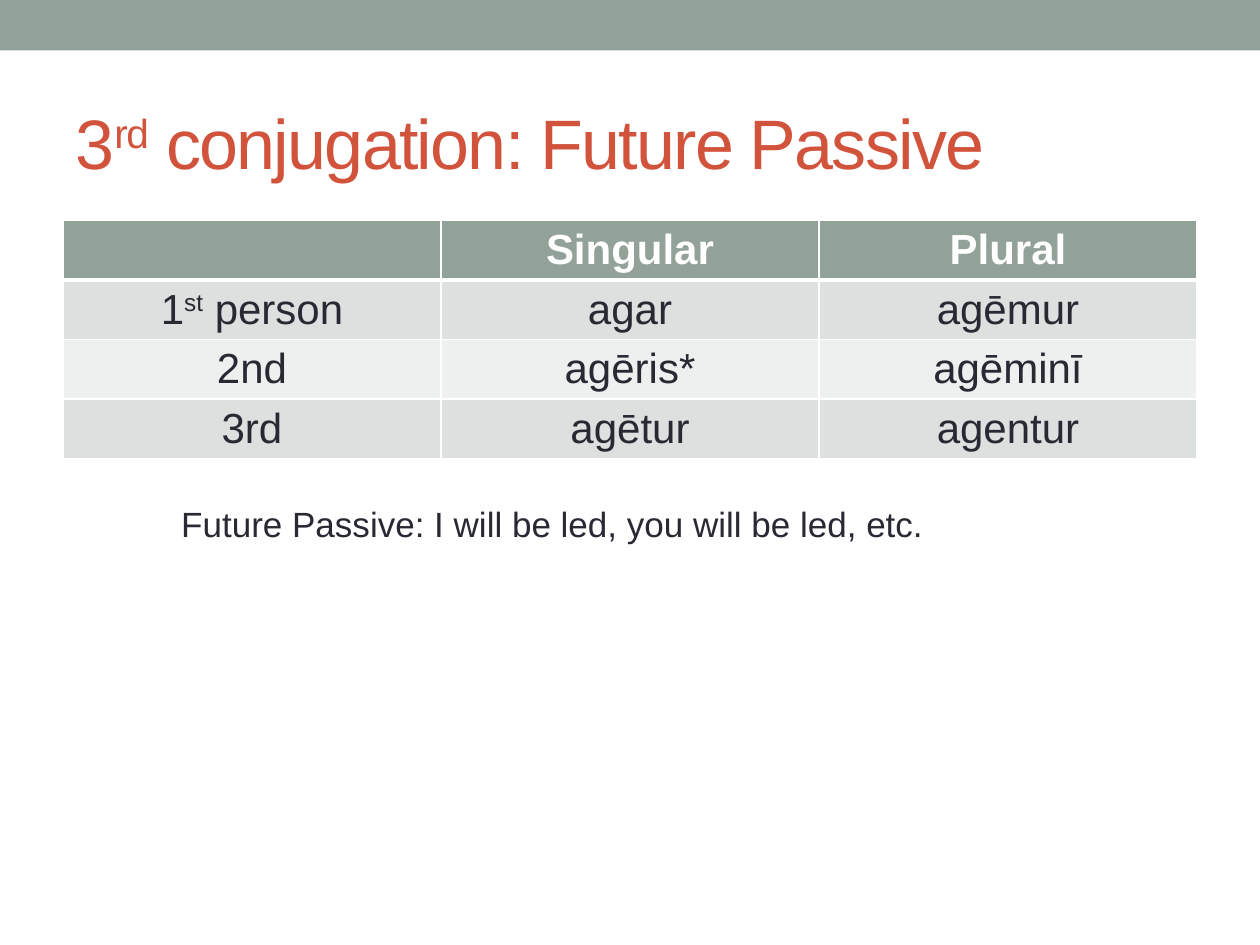
from lxml import etree
from pptx import Presentation
from pptx.dml.color import RGBColor
from pptx.enum.shapes import MSO_SHAPE
from pptx.enum.text import MSO_ANCHOR, PP_ALIGN
from pptx.oxml.ns import qn
from pptx.util import Inches, Pt

RECT = MSO_SHAPE.RECTANGLE
MIDDLE = MSO_ANCHOR.MIDDLE
LEFT, CENTER = PP_ALIGN.LEFT, PP_ALIGN.CENTER
SAGE = RGBColor(0x93, 0xA2, 0x99)
BAND = RGBColor(0xDC, 0xE0, 0xDE)
PALE = RGBColor(0xEE, 0xF0, 0xEF)
RUST = RGBColor(0xD2, 0x53, 0x3C)
INK = RGBColor(0x29, 0x29, 0x34)
WHITE = RGBColor(0xFF, 0xFF, 0xFF)

FORMS = [
    ["", "Singular", "Plural"],
    ["1^st^ person", "agar", "agēmur"],
    ["2nd", "agēris*", "agēminī"],
    ["3rd", "agētur", "agentur"],
]


def write(frame, text, size=24, color=INK, bold=False, align=LEFT, space=0):
    para = frame.paragraphs[0]
    para.alignment = align
    for i, part in enumerate(text.split("^")):
        run = para.add_run()
        run.text = part
        font = run.font
        font.name, font.size, font.bold = "Arial", Pt(size), bold
        font.color.rgb = color
        props = run._r.get_or_add_rPr()
        if space:
            props.set("spc", str(space * 100))
        if i % 2:
            props.set("baseline", "30000")


def edge(cell, side, width):
    props = cell._tc.get_or_add_tcPr()
    line = etree.SubElement(props, qn(f"a:ln{side}"), w=str(Pt(width)))
    fill = etree.SubElement(line, qn("a:solidFill"))
    etree.SubElement(fill, qn("a:srgbClr"), val=str(WHITE))


class Deck:
    def __init__(self):
        self.prs = Presentation()
        self.prs.slide_width, self.prs.slide_height = Inches(10), Inches(7.5)
        self.slide = self.prs.slides.add_slide(self.prs.slide_layouts[5])

    def bar(self, x, y, w, h, color):
        shape = self.slide.shapes.add_shape(RECT, *map(Inches, (x, y, w, h)))
        shape.shadow.inherit = False
        shape.fill.solid()
        shape.fill.fore_color.rgb = color
        shape.line.fill.background()

    def title(self, text, x, y, w, h):
        title = self.slide.shapes.title
        title.left, title.top = Inches(x), Inches(y)
        title.width, title.height = Inches(w), Inches(h)
        title.text_frame.vertical_anchor = MIDDLE
        write(title.text_frame, text, size=40, color=RUST, space=-1)

    def table(self, rows, x, y, w, step):
        size = map(Inches, (x, y, w, step * len(rows)))
        table = self.slide.shapes.add_table(len(rows), len(rows[0]), *size).table
        for r, row in enumerate(rows):
            head = r == 0
            for c, text in enumerate(row):
                cell = table.cell(r, c)
                edge(cell, "L", 1)
                edge(cell, "R", 1)
                edge(cell, "T", 3 if r == 1 else 1)
                edge(cell, "B", 3 if head else 1)
                cell.fill.solid()
                cell.fill.fore_color.rgb = SAGE if head else BAND if r % 2 else PALE
                if text:
                    write(cell.text_frame, text, color=WHITE if head else INK,
                          bold=head, align=CENTER)

    def note(self, text, x, y, w, h):
        box = self.slide.shapes.add_textbox(*map(Inches, (x, y, w, h)))
        box.text_frame.word_wrap = True
        write(box.text_frame, text, size=20)


def main():
    deck = Deck()
    deck.bar(0, 0, 10, 0.4, SAGE)
    deck.title("3^rd^ conjugation: Future Passive", 0.5, 0.58, 9, 1.08)
    deck.table(FORMS, 0.5, 1.75, 9, 0.47)
    deck.note("Future Passive: I will be led, you will be led, etc.",
              1.34, 3.94, 7.97, 0.44)
    deck.prs.save("out.pptx")


if __name__ == "__main__":
    main()
